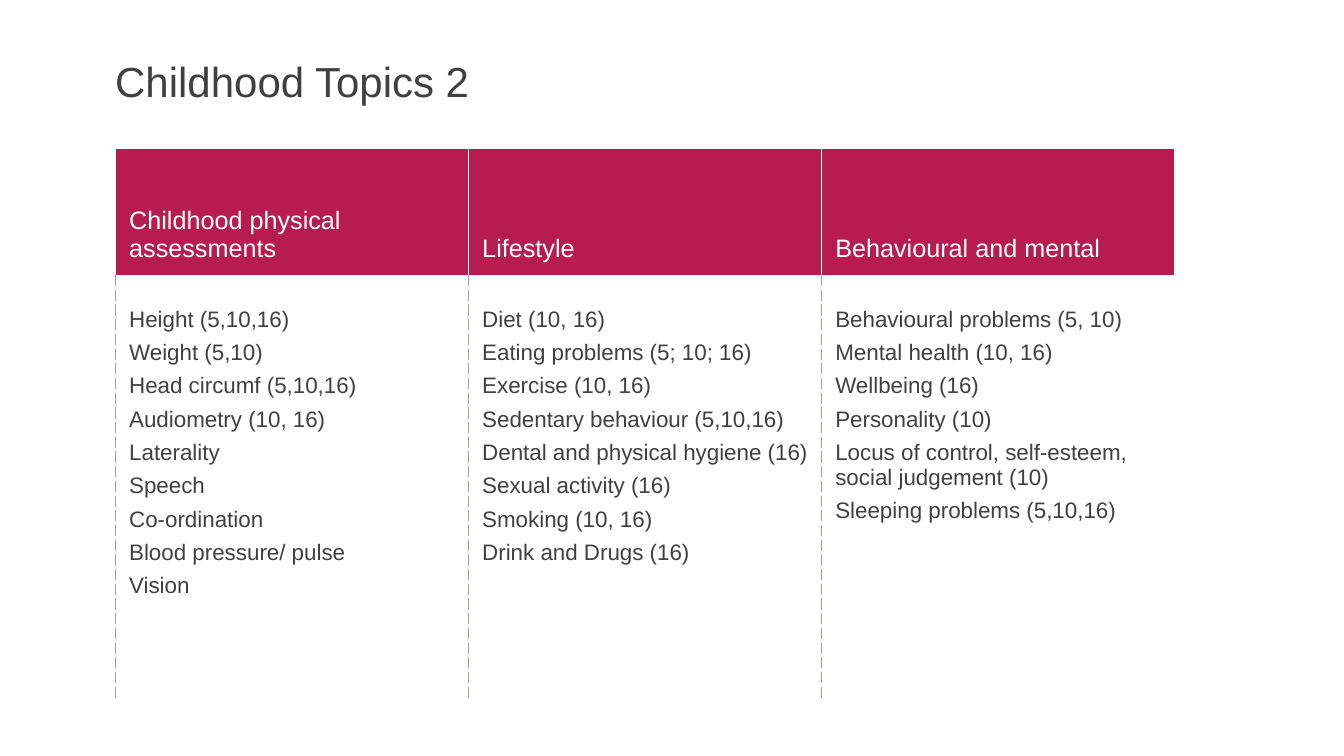
from dataclasses import dataclass

from lxml.etree import SubElement
from pptx import Presentation
from pptx.dml.color import RGBColor
from pptx.enum.text import MSO_ANCHOR
from pptx.oxml.ns import qn
from pptx.util import Pt


@dataclass(frozen=True)
class Theme:
    font: str = "Arial"
    text: str = "404040"
    white: str = "FFFFFF"
    header: str = "B61D4E"
    divider: str = "A79E93"
    title_size: float = 30
    header_size: float = 18
    body_size: float = 16


@dataclass(frozen=True)
class Border:
    color: str
    width: float
    dash: str = "solid"


@dataclass(frozen=True)
class CellStyle:
    size: float
    color: str
    fill: str | None
    anchor: MSO_ANCHOR
    margins: tuple[float, float, float, float]
    space_after: float


@dataclass(frozen=True)
class Topic:
    heading: str
    items: tuple[str, ...]


THEME = Theme()
HEADER = CellStyle(THEME.header_size, THEME.white, THEME.header,
                   MSO_ANCHOR.BOTTOM, (10, 3.6, 10, 10), 0)
BODY = CellStyle(THEME.body_size, THEME.text, None,
                 MSO_ANCHOR.TOP, (10, 21.6, 7.2, 3.6), 6)
THIN = Border(THEME.white, 1)
THICK = Border(THEME.white, 3)
DIVIDER = Border(THEME.divider, 0.25, "dash")

LEFT, TITLE_TOP, TABLE_TOP = 82.3, 42.4, 105.8
COLUMN_WIDTH, ROW_HEIGHTS = 252.2, (92, 301)

TOPICS = (
    Topic("Childhood physical assessments", (
        "Height (5,10,16)", "Weight (5,10)", "Head circumf (5,10,16)",
        "Audiometry (10, 16)", "Laterality", "Speech", "Co-ordination",
        "Blood pressure/ pulse", "Vision")),
    Topic("Lifestyle", (
        "Diet (10, 16)", "Eating problems (5; 10; 16)", "Exercise (10, 16)",
        "Sedentary behaviour (5,10,16)", "Dental and physical hygiene (16)",
        "Sexual activity (16)", "Smoking (10, 16)", "Drink and Drugs (16)")),
    Topic("Behavioural and mental", (
        "Behavioural problems (5, 10)", "Mental health (10, 16)",
        "Wellbeing (16)", "Personality (10)",
        "Locus of control, self-esteem, social judgement (10)",
        "Sleeping problems (5,10,16)")),
)


def set_attrs(target, values: dict) -> None:
    for name, value in values.items():
        setattr(target, name, value)


def write(tf, lines: tuple[str, ...], size: float, color: str, **spacing) -> None:
    for i, line in enumerate(lines):
        p = tf.paragraphs[0] if i == 0 else tf.add_paragraph()
        set_attrs(p, spacing)
        r = p.add_run()
        r.text = line
        set_attrs(r.font, {"name": THEME.font, "size": Pt(size), "bold": False})
        r.font.color.rgb = RGBColor.from_string(color)


def add_borders(cell, borders: dict[str, Border]) -> None:
    tcPr = cell._tc.get_or_add_tcPr()
    for side, border in borders.items():
        ln = SubElement(tcPr, qn(f"a:ln{side}"), w=str(Pt(border.width)))
        fill = SubElement(ln, qn("a:solidFill"))
        SubElement(fill, qn("a:srgbClr"), val=border.color)
        SubElement(ln, qn("a:prstDash"), val=border.dash)


def fill_cell(cell, lines: tuple[str, ...], style: CellStyle,
              borders: dict[str, Border]) -> None:
    add_borders(cell, borders)
    if style.fill:
        cell.fill.solid()
        cell.fill.fore_color.rgb = RGBColor.from_string(style.fill)
    else:
        cell.fill.background()
    sides = ("margin_left", "margin_top", "margin_right", "margin_bottom")
    set_attrs(cell, dict(zip(sides, map(Pt, style.margins))))
    cell.vertical_anchor = style.anchor
    write(cell.text_frame, lines, style.size, style.color,
          space_after=Pt(style.space_after))


def add_title(s, text: str) -> None:
    sp = s.shapes.add_textbox(Pt(LEFT), Pt(TITLE_TOP), Pt(669.6), Pt(35.2))
    tf = sp.text_frame
    set_attrs(tf, {"word_wrap": True, "vertical_anchor": MSO_ANCHOR.MIDDLE,
                   "margin_left": 0, "margin_top": 0,
                   "margin_right": 0, "margin_bottom": 0})
    write(tf, (text,), THEME.title_size, THEME.text, line_spacing=0.9)


def add_topics(s, topics: tuple[Topic, ...]) -> None:
    table = s.shapes.add_table(
        len(ROW_HEIGHTS), len(topics), Pt(LEFT), Pt(TABLE_TOP),
        Pt(COLUMN_WIDTH * len(topics)), Pt(sum(ROW_HEIGHTS))).table
    set_attrs(table, {"first_row": False, "horz_banding": False})
    for row, height in zip(table.rows, ROW_HEIGHTS):
        row.height = Pt(height)
    for i, topic in enumerate(topics):
        table.columns[i].width = Pt(COLUMN_WIDTH)
        right = THIN if i == len(topics) - 1 else DIVIDER
        fill_cell(table.cell(0, i), (topic.heading,), HEADER,
                  {"L": THIN, "R": THIN, "T": THIN, "B": THICK})
        fill_cell(table.cell(1, i), topic.items, BODY,
                  {"L": DIVIDER, "R": right, "T": THIN, "B": THIN})


def main() -> None:
    prs = Presentation()
    set_attrs(prs, {"slide_width": Pt(960), "slide_height": Pt(540)})
    s = prs.slides.add_slide(prs.slide_layouts[6])
    add_topics(s, TOPICS)
    add_title(s, "Childhood Topics 2")
    prs.save("out.pptx")


if __name__ == "__main__":
    main()
